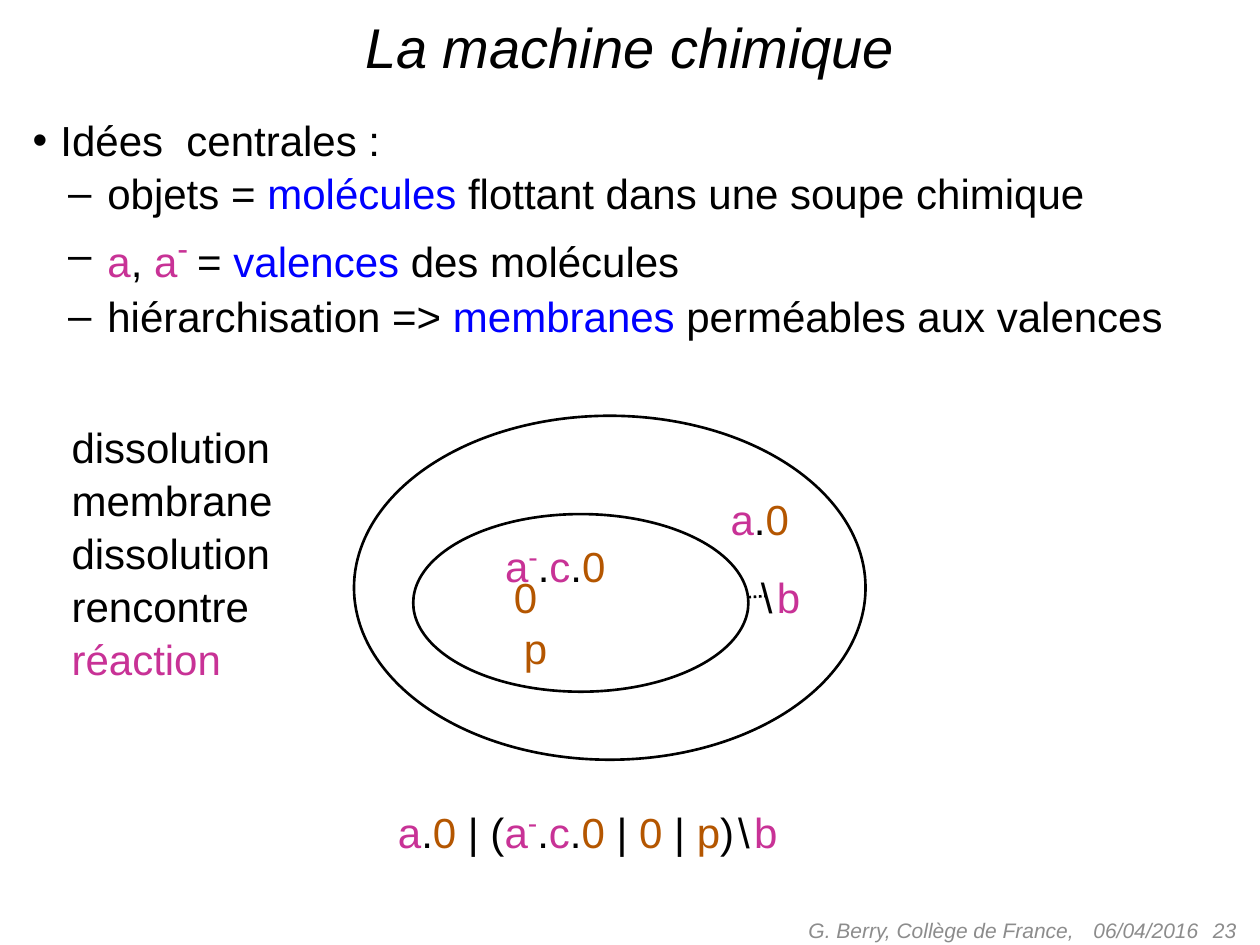
from dataclasses import dataclass
from typing import NamedTuple

from lxml.etree import SubElement
from pptx import Presentation
from pptx.dml.color import RGBColor as RGB
from pptx.enum.dml import MSO_LINE
from pptx.enum.shapes import MSO_CONNECTOR, MSO_SHAPE
from pptx.enum.text import MSO_ANCHOR as Anchor
from pptx.enum.text import MSO_AUTO_SIZE as AutoSize
from pptx.enum.text import PP_ALIGN as Align
from pptx.oxml.ns import qn
from pptx.util import Inches, Pt


@dataclass(frozen=True)
class Theme:
    font: str = "Arial"
    ink: RGB = RGB(0, 0, 0)
    valence: RGB = RGB(0xC8, 0x32, 0x96)
    process: RGB = RGB(0xB4, 0x56, 0x00)
    key: RGB = RGB(0, 0, 0xFF)
    footer: RGB = RGB(0x8C, 0x8C, 0x8C)
    title_size: int = 32
    body_size: int = 24
    sup_size: int = 28
    footer_size: int = 12
    line_width: float = 1.5


T = Theme()


class Part(NamedTuple):
    text: str
    color: RGB = T.ink
    size: int = T.body_size
    sup: bool = False
    italic: bool = False


class Box(NamedTuple):
    x: float
    y: float
    w: float
    h: float


class Label(NamedTuple):
    box: Box
    lines: list[list[Part]]
    before: int = 6


class Footer(NamedTuple):
    box: Box
    text: str
    align: Align


def place(sp, box: Box) -> None:
    sp.left, sp.top, sp.width, sp.height = map(Inches, box)


def write(p, parts: list[Part]) -> None:
    for part in parts:
        r = p.add_run()
        r.text = part.text
        r.font.name = T.font
        r.font.size = Pt(part.size)
        r.font.italic = part.italic
        r.font.color.rgb = part.color
        if part.sup:
            r.font._element.set("baseline", "30000")


def layout(p, before: int, margin: float = 0.22, bullet: str = "") -> None:
    p.line_spacing = 1.05
    p.space_before = Pt(before)
    pPr = p._p.get_or_add_pPr()
    pPr.set("marL", str(Inches(margin)))
    pPr.set("indent", str(Inches(-0.22)))
    if bullet:
        SubElement(pPr, qn("a:buFont"), typeface=T.font)
        SubElement(pPr, qn("a:buChar"), char=bullet)


def add_label(s, label: Label) -> None:
    tf = s.shapes.add_textbox(*map(Inches, label.box)).text_frame
    tf.word_wrap = False
    tf.auto_size = AutoSize.SHAPE_TO_FIT_TEXT
    for i, parts in enumerate(label.lines):
        p = tf.add_paragraph() if i else tf.paragraphs[0]
        layout(p, label.before)
        write(p, parts)


def add_footer(s, footer: Footer) -> None:
    tf = s.shapes.add_textbox(*map(Inches, footer.box)).text_frame
    tf.word_wrap = True
    tf.vertical_anchor = Anchor.MIDDLE
    p = tf.paragraphs[0]
    p.alignment = footer.align
    write(p, [Part(footer.text, T.footer, T.footer_size, italic=True)])


def add_membrane(s, box: Box) -> None:
    sp = s.shapes.add_shape(MSO_SHAPE.OVAL, *map(Inches, box))
    sp.shadow.inherit = False
    sp.fill.background()
    sp.line.color.rgb = T.ink
    sp.line.width = Pt(T.line_width)


def add_dotted_link(s, x1: float, y1: float, x2: float, y2: float) -> None:
    ends = map(Inches, (x1, y1, x2, y2))
    link = s.shapes.add_connector(MSO_CONNECTOR.STRAIGHT, *ends)
    link.line.color.rgb = T.ink
    link.line.width = Pt(T.line_width)
    link.line.dash_style = MSO_LINE.ROUND_DOT
    SubElement(link._element.spPr, qn("a:effectLst"))


def add_title(s, text: str) -> None:
    sp = s.shapes.title
    place(sp, Box(0.25, 0.05, 9.5, 0.64))
    tf = sp.text_frame
    tf.auto_size = AutoSize.NONE
    tf.vertical_anchor = Anchor.TOP
    p = tf.paragraphs[0]
    p.alignment = Align.CENTER
    write(p, [Part(text, size=T.title_size, italic=True)])


def add_ideas(s, heading: str, ideas: list[list[Part]]) -> None:
    sp = s.placeholders[1]
    place(sp, Box(0.16, 0.84, 9.69, 1.79))
    tf = sp.text_frame
    tf.auto_size = AutoSize.NONE
    p = tf.paragraphs[0]
    layout(p, 6, bullet="•")
    write(p, [Part(heading)])
    for idea in ideas:
        p = tf.add_paragraph()
        p.level = 1
        layout(p, 0, 0.5, "–")
        write(p, [Part(" "), *idea])


DOT = Part(".")
A = Part("a", T.valence)
B = Part("b", T.valence)
ZERO = Part("0", T.process)
P = Part("p", T.process)
BAR = Part(" | ")
A_ZERO = [A, DOT, ZERO]
REACTION = [A, Part("-", T.valence, T.sup_size, True), DOT,
            Part("c", T.valence), DOT, ZERO]
RESTRICT_B = [Part("\\"), Part(" ", size=9), B]

IDEAS = [
    [Part("objets = "), Part("molécules", T.key),
     Part(" flottant dans une soupe chimique")],
    [A, Part(", "), A, Part("- ", T.valence, T.title_size, True),
     Part("= "), Part("valences", T.key), Part(" des molécules")],
    [Part("hiérarchisation => "), Part("membranes ", T.key),
     Part("perméables aux valences")],
]
STEPS = [[Part(step)] for step in
         ("dissolution", "membrane", "dissolution", "rencontre")]
STEPS.append([Part("réaction", T.valence)])

MEMBRANES = [Box(2.81, 3.3, 4.06, 2.73), Box(3.28, 4.08, 2.66, 1.41)]
LABELS = [
    Label(Box(3.06, 6.27, 3.35, 0.53),
          [[*A_ZERO, BAR, Part("("), *REACTION, BAR, ZERO, BAR, P,
            Part(")"), Part(" ", size=8), *RESTRICT_B]]),
    Label(Box(0.47, 3.28, 1.8, 2.22), STEPS, 0),
    Label(Box(3.98, 4.47, 0.39, 0.5), [[ZERO]]),
    Label(Box(5.94, 4.47, 0.61, 0.53), [RESTRICT_B]),
    Label(Box(3.91, 4.16, 1.02, 0.53), [REACTION]),
    Label(Box(5.7, 3.85, 0.67, 0.53), [A_ZERO]),
    Label(Box(4.06, 4.87, 0.39, 0.5), [[P]]),
]
FOOTERS = [
    Footer(Box(8.58, 7.18, 2.33, 0.4), "06/04/2016", Align.LEFT),
    Footer(Box(7.58, 7.18, 2.33, 0.4), " 23", Align.RIGHT),
    Footer(Box(5.5, 7.18, 3.17, 0.4), "G. Berry, Collège de France, ",
           Align.RIGHT),
]


def main() -> None:
    prs = Presentation()
    prs.slide_width, prs.slide_height = Inches(10), Inches(7.5)
    s = prs.slides.add_slide(prs.slide_layouts[1])
    add_title(s, "La machine chimique")
    add_ideas(s, "Idées  centrales :", IDEAS)
    for box in MEMBRANES:
        add_membrane(s, box)
    add_dotted_link(s, 5.94, 4.74, 6.08, 4.73)
    for label in LABELS:
        add_label(s, label)
    for footer in FOOTERS:
        add_footer(s, footer)
    prs.save("out.pptx")


if __name__ == "__main__":
    main()
